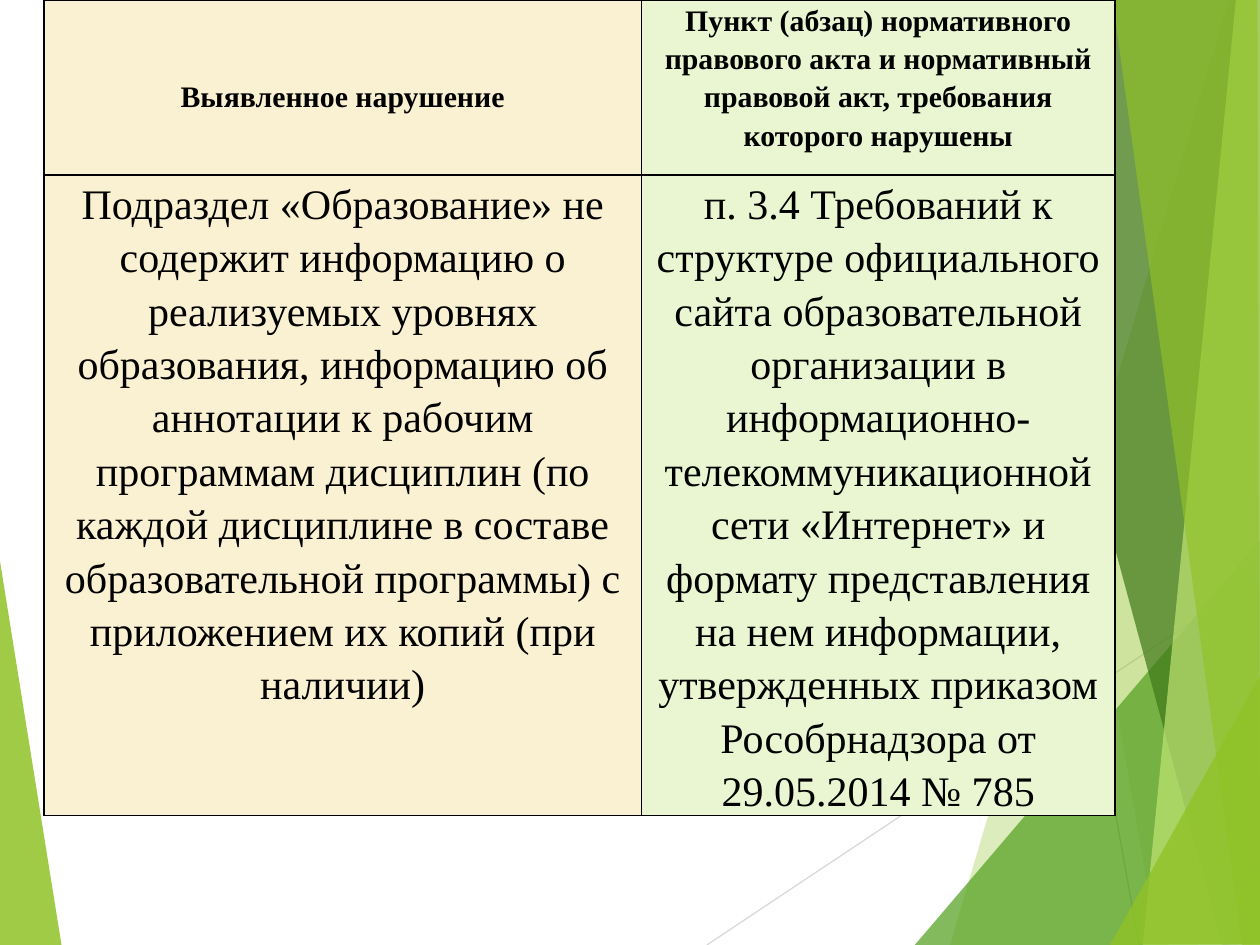
import pptx
import pptx.dml.color
import pptx.enum.shapes
import pptx.enum.text
import pptx.oxml
import pptx.oxml.ns
import pptx.util
from pptx.util import Inches

# Decoration, back to front: outline points, colour, opacity in percent
LEFT_WEDGE = ([(-0.01, 4.39), (0.49, 7.51), (-0.01, 7.5)], "90C226", 85)
RAYS = [
    ((5.61, 7.5), (10.01, 4.57), "D9D9D9"),
    ((7.7, 0), (9.04, 7.5), "BFBFBF"),
]
FACETS = [
    ([(9.75, 0), (7.54, 7.5), (10.02, 7.51), (10.01, 0.01)], "90C226", 30),
    ([(7.88, -0.01), (9.19, 7.5), (10.01, 7.5), (10.01, -0.01)], "90C226", 20),
    ([(7.26, 7.5), (10, 4.29), (10.01, 7.5)], "54A021", 72),
    ([(7.67, -0.01), (9.7, 7.5), (10.01, 7.49), (10.01, -0.01)], "3F7819", 70),
    ([(9.81, -0.01), (9.07, 7.5), (10.01, 7.5), (10, -0.01)], "C0E474", 70),
    ([(8.83, -0.01), (9.86, 7.5), (10, 7.5), (9.98, -0.01)], "90C226", 65),
    ([(8.81, 7.5), (10.01, 5.35), (10.01, 7.49)], "90C226", 80),
]

HEADERS = [
    "Выявленное нарушение",
    "Пункт (абзац) нормативного правового акта и нормативный правовой акт, "
    "требования которого нарушены",
]
FINDING = [
    "Подраздел «Образование» не содержит информацию о реализуемых уровнях "
    "образования, информацию об аннотации к рабочим программам дисциплин "
    "(по каждой дисциплине в составе образовательной программы) "
    "с приложением их копий (при наличии)",
    "п. 3.4 Требований к структуре официального сайта образовательной "
    "организации в информационно-телекоммуникационной сети «Интернет» и "
    "формату представления на нем информации, утвержденных приказом "
    "Рособрнадзора от 29.05.2014 № 785",
]
COLUMN_WIDTHS = [4.74, 3.76]
COLUMN_FILLS = ["FAF1D2", "EAF6D1"]
ROW_HEIGHTS = [1.39, 5.08]
ROW_FORMATS = [dict(size=17, bold=True), dict(size=24, bold=False)]
HEADER_DROP = 0.6  # lowers the first heading by two text lines


def rgb(color):
    return pptx.dml.color.RGBColor.from_string(color)


def add_facet(slide, points, color, opacity):
    corners = [(Inches(x), Inches(y)) for x, y in points]
    builder = slide.shapes.build_freeform(*corners[0])
    builder.add_line_segments(corners[1:], close=True)
    facet = builder.convert_to_shape()
    facet.shadow.inherit = False
    facet.fill.solid()
    facet.fill.fore_color.rgb = rgb(color)
    facet.line.fill.background()
    tint = facet.fill._xPr.find(".//" + pptx.oxml.ns.qn("a:srgbClr"))
    pptx.oxml.ns.qn("a:alpha")
    tint.append(pptx.oxml.parse_xml(
        f'<a:alpha {pptx.oxml.ns.nsdecls("a")} val="{opacity * 1000}"/>'))


def add_ray(slide, start, end, color):
    ray = slide.shapes.add_connector(
        pptx.enum.shapes.MSO_CONNECTOR.STRAIGHT,
        *(Inches(value) for value in start + end))
    ray.line.color.rgb = rgb(color)
    ray.line.width = pptx.util.Pt(0.75)
    ray._element.spPr.append(pptx.oxml.parse_xml(
        f'<a:effectLst {pptx.oxml.ns.nsdecls("a")}/>'))


def write(frame, text, size, bold, color="000000"):
    paragraph = frame.paragraphs[0]
    paragraph.alignment = pptx.enum.text.PP_ALIGN.CENTER
    paragraph.line_spacing = 1.15
    run = paragraph.add_run()
    run.text = text
    run.font.name = "Times New Roman"
    run.font.size = pptx.util.Pt(size)
    run.font.bold = bold
    run.font.color.rgb = rgb(color)


def add_borders(cell, color="000000", width=1):
    properties = cell._tc.get_or_add_tcPr()
    for position, side in enumerate(["lnL", "lnR", "lnT", "lnB"]):
        properties.insert(position, pptx.oxml.parse_xml(
            f'<a:{side} {pptx.oxml.ns.nsdecls("a")} w="{pptx.util.Pt(width)}">'
            f'<a:solidFill><a:srgbClr val="{color}"/></a:solidFill></a:{side}>'))


def add_findings_table(slide):
    table = slide.shapes.add_table(
        2, 2, Inches(0.35), Inches(0),
        Inches(sum(COLUMN_WIDTHS)), Inches(sum(ROW_HEIGHTS))).table
    for column, width in zip(table.columns, COLUMN_WIDTHS):
        column.width = Inches(width)
    for r, texts in enumerate([HEADERS, FINDING]):
        table.rows[r].height = Inches(ROW_HEIGHTS[r])
        for c, text in enumerate(texts):
            cell = table.cell(r, c)
            cell.margin_left = cell.margin_right = Inches(0.05)
            cell.margin_top = cell.margin_bottom = Inches(0)
            cell.fill.solid()
            cell.fill.fore_color.rgb = rgb(COLUMN_FILLS[c])
            add_borders(cell)
            write(cell.text_frame, text, **ROW_FORMATS[r])
    table.cell(0, 0).margin_top = Inches(HEADER_DROP)


def main():
    deck = pptx.Presentation()
    deck.slide_width, deck.slide_height = Inches(10), Inches(7.5)
    slide = deck.slides.add_slide(deck.slide_layouts[6])
    add_facet(slide, *LEFT_WEDGE)
    for ray in RAYS:
        add_ray(slide, *ray)
    for facet in FACETS:
        add_facet(slide, *facet)
    add_findings_table(slide)
    deck.save("out.pptx")


if __name__ == "__main__":
    main()
